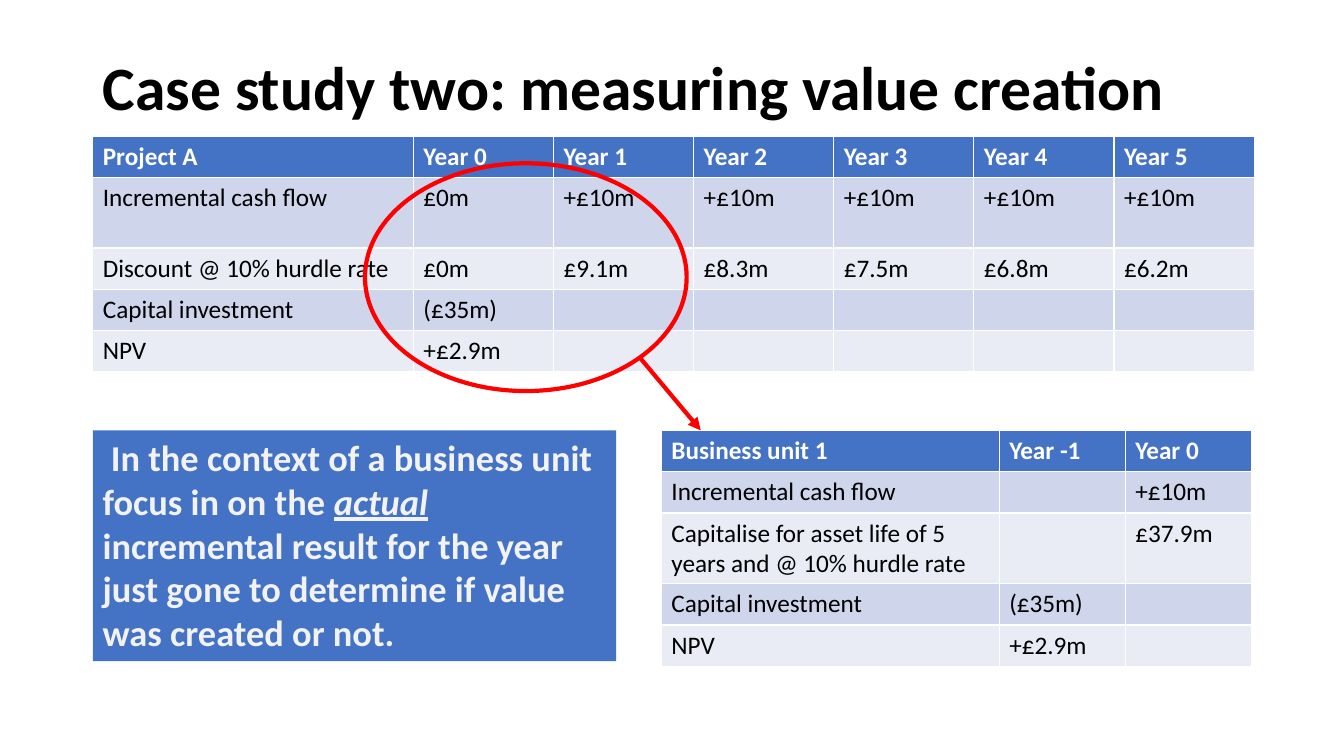
from dataclasses import dataclass

from lxml.etree import SubElement
from pptx import Presentation
from pptx.dml.color import RGBColor
from pptx.enum.shapes import MSO_CONNECTOR, MSO_SHAPE
from pptx.enum.text import MSO_ANCHOR, PP_ALIGN
from pptx.oxml.ns import qn
from pptx.util import Inches, Pt


@dataclass(frozen=True)
class Theme:
    font: str = "Calibri"
    black: str = "000000"
    white: str = "FFFFFF"
    blue: str = "4472C4"
    pale: str = "F2F2F2"
    bands: tuple = ("CFD5EA", "E9EBF5")
    red: str = "FF0000"
    title_size: int = 44
    callout_size: int = 26
    table_size: int = 18
    line_width: int = 3


class SlideBuilder:
    def __init__(self, page, theme):
        self.page = page
        self.theme = theme

    def style(self, para, size, color, bold=False):
        para.font.name = self.theme.font
        para.font.size = Pt(size)
        para.font.bold = bold
        para.font.color.rgb = RGBColor.from_string(color)

    def fill(self, target, color):
        target.fill.solid()
        target.fill.fore_color.rgb = RGBColor.from_string(color)

    def outline(self, target):
        target.line.color.rgb = RGBColor.from_string(self.theme.red)
        target.line.width = Pt(self.theme.line_width)

    def title(self, text, left, top, width, height):
        box = self.page.shapes.add_textbox(
            Inches(left), Inches(top), Inches(width), Inches(height))
        box.text_frame.word_wrap = True
        box.text_frame.vertical_anchor = MSO_ANCHOR.MIDDLE
        para = box.text_frame.paragraphs[0]
        para.text = text
        para.line_spacing = 0.9
        self.style(para, self.theme.title_size, self.theme.black, True)

    def callout(self, before, stressed, after, left, top, width, height):
        box = self.page.shapes.add_shape(
            MSO_SHAPE.RECTANGLE, Inches(left), Inches(top), Inches(width), Inches(height))
        box.shadow.inherit = False
        box.line.fill.background()
        self.fill(box, self.theme.blue)
        box.text_frame.word_wrap = True
        box.text_frame.vertical_anchor = MSO_ANCHOR.TOP
        para = box.text_frame.paragraphs[0]
        para.alignment = PP_ALIGN.LEFT
        self.style(para, self.theme.callout_size, self.theme.pale, True)
        for text in (before, stressed, after):
            span = para.add_run()
            span.text = text
            if text == stressed:
                span.font.italic = True
                span.font.underline = True

    def table(self, rows, left, top, widths, heights):
        table = self.page.shapes.add_table(
            len(rows), len(widths), Inches(left), Inches(top),
            Inches(sum(widths)), Inches(sum(heights))).table
        for column, width in zip(table.columns, widths):
            column.width = Inches(width)
        for index, (values, height) in enumerate(zip(rows, heights)):
            header = index == 0
            table.rows[index].height = Inches(height)
            band = self.theme.blue if header else self.theme.bands[(index - 1) % 2]
            color = self.theme.white if header else self.theme.black
            for cell, value in zip(table.rows[index].cells, values):
                self.fill(cell, band)
                para = cell.text_frame.paragraphs[0]
                para.text = value
                self.style(para, self.theme.table_size, color, header)

    def ring(self, left, top, width, height):
        ring = self.page.shapes.add_shape(
            MSO_SHAPE.OVAL, Inches(left), Inches(top), Inches(width), Inches(height))
        ring.shadow.inherit = False
        ring.fill.background()
        self.outline(ring)

    def arrow(self, start, end):
        arrow = self.page.shapes.add_connector(
            MSO_CONNECTOR.STRAIGHT, *map(Inches, start + end))
        self.outline(arrow)
        SubElement(arrow.line._get_or_add_ln(), qn("a:tailEnd"), type="triangle")
        SubElement(arrow._element.spPr, qn("a:effectLst"))


def main():
    deck = Presentation()
    deck.slide_width = Inches(13.33)
    deck.slide_height = Inches(7.5)
    slide = SlideBuilder(deck.slides.add_slide(deck.slide_layouts[6]), Theme())
    left, lower_top, row_height, tall_row = 0.92, 4.27, 0.41, 0.7

    slide.title("Case study two: measuring value creation", left, 0.17, 11.5, 1.45)
    slide.callout(
        " In the context of a business unit focus in on the ",
        "actual",
        " incremental result for the year just gone to determine if value was created or not.",
        left, lower_top, 5.19, 2.29)

    project_rows = [
        ["Project A"] + [f"Year {year}" for year in range(6)],
        ["Incremental cash flow", "£0m"] + ["+£10m"] * 5,
        ["Discount @ 10% hurdle rate", "£0m", "£9.1m", "£8.3m", "£7.5m", "£6.8m", "£6.2m"],
        ["Capital investment", "(£35m)"] + [""] * 5,
        ["NPV", "+£2.9m"] + [""] * 5,
    ]
    slide.table(project_rows, left, 1.35, [3.18] + [1.39] * 6,
                [row_height, tall_row] + [row_height] * 3)
    slide.ring(3.62, 1.62, 3.19, 2.26)

    unit_rows = [
        ["Business unit 1", "Year -1", "Year 0"],
        ["Incremental cash flow", "", "+£10m"],
        ["Capitalise for asset life of 5 years and @ 10% hurdle rate", "", "£37.9m"],
        ["Capital investment", "(£35m)", ""],
        ["NPV", "+£2.9m", ""],
    ]
    slide.table(unit_rows, 6.56, lower_top, [3.35] + [1.25] * 2,
                [row_height] * 2 + [tall_row] + [row_height] * 2)
    slide.arrow((6.34, 3.54), (6.95, lower_top))

    deck.save("out.pptx")


if __name__ == "__main__":
    main()
